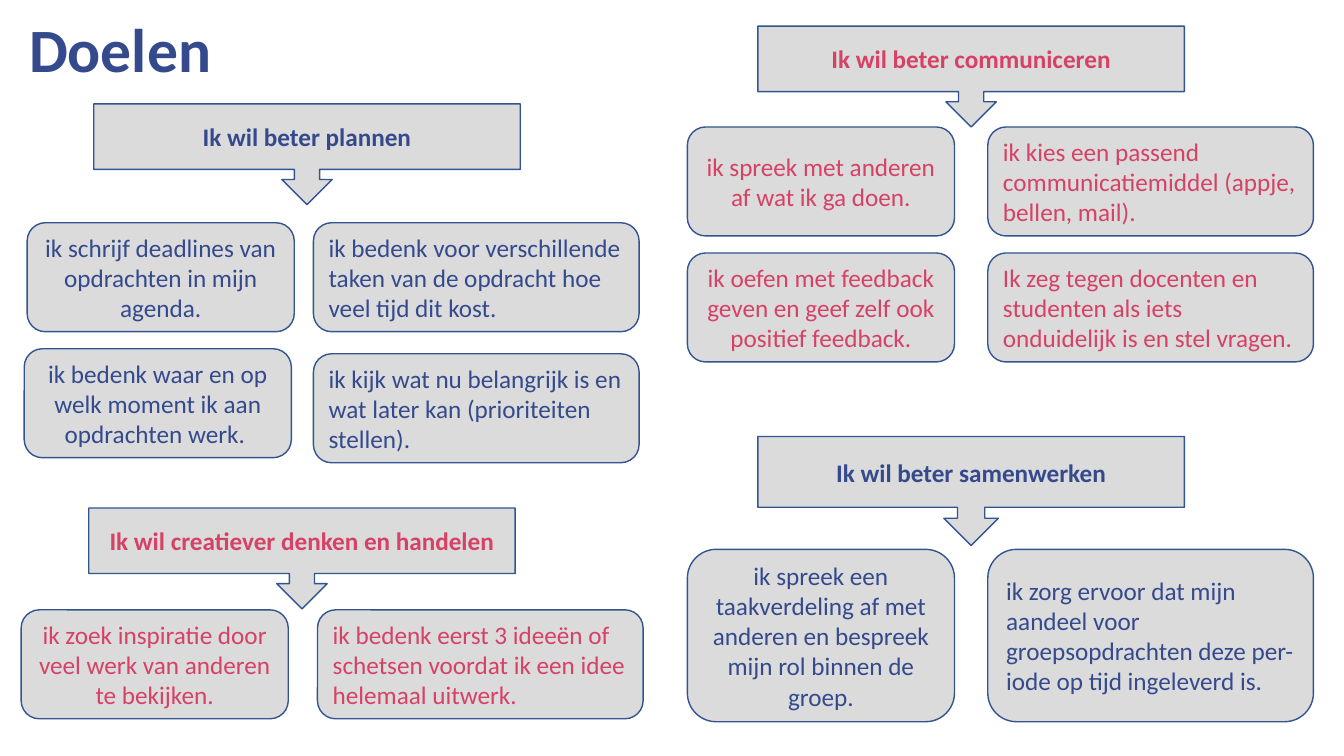
"""Build the slide "Doelen": four goals, each with the steps that lead to it."""
from pptx import Presentation
from pptx.dml.color import RGBColor
from pptx.enum.shapes import MSO_SHAPE
from pptx.enum.text import MSO_ANCHOR, PP_ALIGN
from pptx.util import Pt

BLUE = RGBColor(0x34, 0x4A, 0x8D)
PINK = RGBColor(0xD6, 0x41, 0x66)
GREY = RGBColor(0xDB, 0xDB, 0xDB)
OUTLINE = RGBColor(0x32, 0x54, 0x91)

GOAL_WIDTH = 304.6
STEP_COLUMNS = [(190.8, PP_ALIGN.CENTER), (232.6, PP_ALIGN.LEFT)]

GOALS = [
    ("Ik wil beter plannen", BLUE, (67, 74.2, 72), 77.8, [
        (19.4, 159.1, "ik schrijf deadlines van opdrachten in mijn agenda."),
        (223.9, 159.1, "ik bedenk voor verschillende taken van de opdracht hoe veel tijd dit kost."),
        (17.3, 249.1, "ik bedenk waar en op welk moment ik aan opdrachten werk. "),
        (223.9, 252.7, "ik kijk wat nu belangrijk is en wat later kan (prioriteiten stellen)."),
    ]),
    ("Ik wil beter communiceren", PINK, (541.4, 18.7, 72), 77.8, [
        (491, 90.7, "ik spreek met anderen af wat ik ga doen."),
        (705.6, 90.7, "ik kies een passend communicatiemiddel (appje, bellen, mail)."),
        (491, 180.7, "ik oefen met feedback geven en geef zelf ook positief feedback."),
        (705.6, 180.7, "Ik zeg tegen docenten en studenten als iets onduidelijk is en stel vragen."),
    ]),
    ("Ik wil beter samenwerken", BLUE, (541.4, 311.8, 77.8), 123.1, [
        (491, 392.4, "ik spreek een taakverdeling af met anderen en bespreek mijn rol binnen de groep."),
        (705.6, 392.4, "ik zorg ervoor dat mijn aandeel voor groepsopdrachten deze per-iode op tijd ingeleverd is."),
    ]),
    ("Ik wil creatiever denken en handelen", PINK, (63.4, 362.9, 72), 77.8, [
        (15.1, 435.6, "ik zoek inspiratie door veel werk van anderen te bekijken."),
        (226.8, 435.6, "ik bedenk eerst 3 ideeën of schetsen voordat ik een idee helemaal uitwerk."),
    ]),
]


def write(shape, text, color, size=18, bold=False, align=PP_ALIGN.CENTER, spacing=1.0):
    frame = shape.text_frame
    frame.word_wrap = True
    frame.vertical_anchor = MSO_ANCHOR.MIDDLE
    paragraph = frame.paragraphs[0]
    paragraph.alignment = align
    paragraph.line_spacing = spacing
    run = paragraph.add_run()
    run.text = text
    run.font.name = "Calibri"
    run.font.size = Pt(size)
    run.font.bold = bold
    run.font.color.rgb = color


def add_box(kind, left, top, width, height):
    box = slide.shapes.add_shape(kind, Pt(left), Pt(top), Pt(width), Pt(height))
    box.shadow.inherit = False
    box.fill.solid()
    box.fill.fore_color.rgb = GREY
    box.line.color.rgb = OUTLINE
    box.line.width = Pt(1)
    return box


deck = Presentation()
deck.slide_width, deck.slide_height = Pt(960), Pt(540)
slide = deck.slides.add_slide(deck.slide_layouts[6])

title = slide.shapes.add_textbox(Pt(13.7), Pt(7.9), Pt(838.8), Pt(59.8))
write(title, "Doelen", BLUE, size=44, bold=True, align=PP_ALIGN.LEFT, spacing=0.9)

for goal, color, (goal_left, goal_top, goal_height), step_height, steps in GOALS:
    callout = add_box(MSO_SHAPE.DOWN_ARROW_CALLOUT, goal_left, goal_top, GOAL_WIDTH, goal_height)
    write(callout, goal, color, bold=True)
    for index, (left, top, step) in enumerate(steps):
        width, align = STEP_COLUMNS[index % 2]
        card = add_box(MSO_SHAPE.ROUNDED_RECTANGLE, left, top, width, step_height)
        write(card, step, color, align=align)

deck.save("out.pptx")
